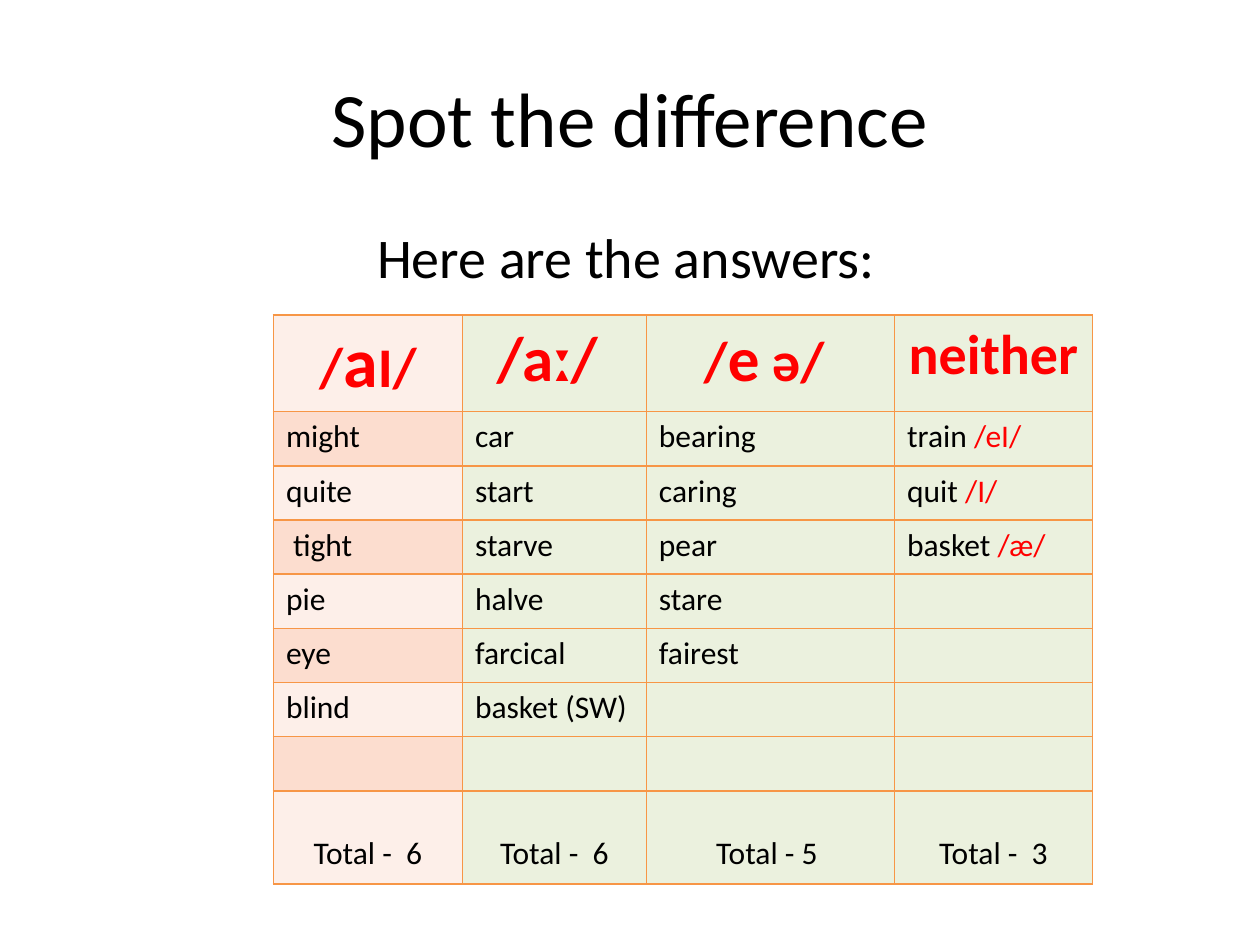
"""Builds the answer slide of a vowel-sound sorting exercise."""
from lxml import etree
from pptx import Presentation
from pptx.dml.color import RGBColor
from pptx.enum.text import MSO_ANCHOR, PP_ALIGN
from pptx.oxml.ns import qn
from pptx.util import Inches, Pt

CENTER, LEFT = PP_ALIGN.CENTER, PP_ALIGN.LEFT
MIDDLE, TOP = MSO_ANCHOR.MIDDLE, MSO_ANCHOR.TOP

COLORS = {
    "text": "000000",
    "sound": "FF0000",
    "border": "F79646",
    "pale": "FDEFE9",
    "peach": "FCDDCF",
    "green": "EBF1DE",
}
FONT = "Calibri"
BORDER_WIDTH = Pt(1)

TITLE = "Spot the difference"
SUBTITLE = "Here are the answers:"
SOUNDS = [
    [("/", 32), ("a", 40), ("I/", 32)],
    [("/aː/ ", 36)],
    [("/", 32), ("e", 36), (" ə/ ", 32)],
    [("neither", 32)],
]
WORDS = [
    ["might", "quite", " tight", "pie", "eye", "blind"],
    ["car", "start", "starve", "halve", "farcical", "basket (SW)"],
    ["bearing", "caring", "pear", "stare", "fairest"],
    [("train ", "/eI/"), ("quit", " /I/"), ("basket ", "/æ/")],
]
TOTALS = ["Total -  6", "Total -  6", "Total - 5 ", "Total -  3"]

COLUMN_WIDTHS = [1.5, 1.46, 1.97, 1.57]
WORD_ROWS = 7
ROW_HEIGHTS = [0.74] + [0.43] * WORD_ROWS + [0.74]
TABLE_LEFT, TABLE_TOP = 2.17, 2.5
TOTAL_MARGIN_TOP = 0.35


def write(frame, runs, align):
    """Fill a text frame with one paragraph of (text, size, color, bold) runs."""
    paragraph = frame.paragraphs[0]
    paragraph.alignment = align
    for text, size, color, bold in runs:
        run = paragraph.add_run()
        run.text = text
        for name, value in {"name": FONT, "size": Pt(size), "bold": bold}.items():
            setattr(run.font, name, value)
        run.font.color.rgb = RGBColor.from_string(COLORS[color])


def style_cell(cell, fill):
    """Give a cell its four borders and its fill."""
    properties = cell._tc.get_or_add_tcPr()
    for side in ("a:lnL", "a:lnR", "a:lnT", "a:lnB"):
        line = etree.SubElement(properties, qn(side), w=str(BORDER_WIDTH))
        solid = etree.SubElement(line, qn("a:solidFill"))
        etree.SubElement(solid, qn("a:srgbClr"), val=COLORS["border"])
    cell.fill.solid()
    cell.fill.fore_color.rgb = RGBColor.from_string(COLORS[fill])


def add_headings(slide):
    """Place the title and the line that introduces the table."""
    title = slide.shapes.title
    subtitle = slide.shapes.add_textbox(0, 0, 0, 0)
    headings = [
        (title, TITLE, 44, MIDDLE, (0.5, 0.3, 9, 1.25)),
        (subtitle, SUBTITLE, 32, TOP, (0.47, 1.72, 9, 4.95)),
    ]
    for heading, text, size, anchor, box in headings:
        for name, length in zip(("left", "top", "width", "height"), box):
            setattr(heading, name, Inches(length))
        heading.text_frame.word_wrap = True
        heading.text_frame.vertical_anchor = anchor
        write(heading.text_frame, [(text, size, "text", False)], CENTER)


def add_answers(slide):
    """Build the table with one column for each sound."""
    answers = slide.shapes.add_table(
        len(ROW_HEIGHTS), len(COLUMN_WIDTHS),
        Inches(TABLE_LEFT), Inches(TABLE_TOP),
        Inches(sum(COLUMN_WIDTHS)), Inches(sum(ROW_HEIGHTS))).table
    answers.first_row = answers.horz_banding = False
    for column, width in zip(answers.columns, COLUMN_WIDTHS):
        column.width = Inches(width)
    for row, height in zip(answers.rows, ROW_HEIGHTS):
        row.height = Inches(height)

    last = len(ROW_HEIGHTS) - 1
    for c, (sound, words, total) in enumerate(zip(SOUNDS, WORDS, TOTALS)):
        for r in range(len(ROW_HEIGHTS)):
            band = "peach" if r % 2 else "pale"
            style_cell(answers.cell(r, c), "green" if c else band)
        heading = [(text, size, "sound", True) for text, size in sound]
        write(answers.cell(0, c).text_frame, heading, CENTER)
        for r, word in enumerate(words, start=1):
            parts = (word,) if isinstance(word, str) else word
            runs = [(part, 18, color, False)
                    for part, color in zip(parts, ("text", "sound"))]
            write(answers.cell(r, c).text_frame, runs, LEFT)
        total_cell = answers.cell(last, c)
        total_cell.margin_top = Inches(TOTAL_MARGIN_TOP)
        write(total_cell.text_frame, [(total, 18, "text", False)], CENTER)


def main():
    """Create the presentation and save it."""
    deck = Presentation()
    deck.slide_width, deck.slide_height = Inches(10), Inches(7.5)
    slide = deck.slides.add_slide(deck.slide_layouts.get_by_name("Title Only"))
    add_headings(slide)
    add_answers(slide)
    deck.save("out.pptx")


if __name__ == "__main__":
    main()
